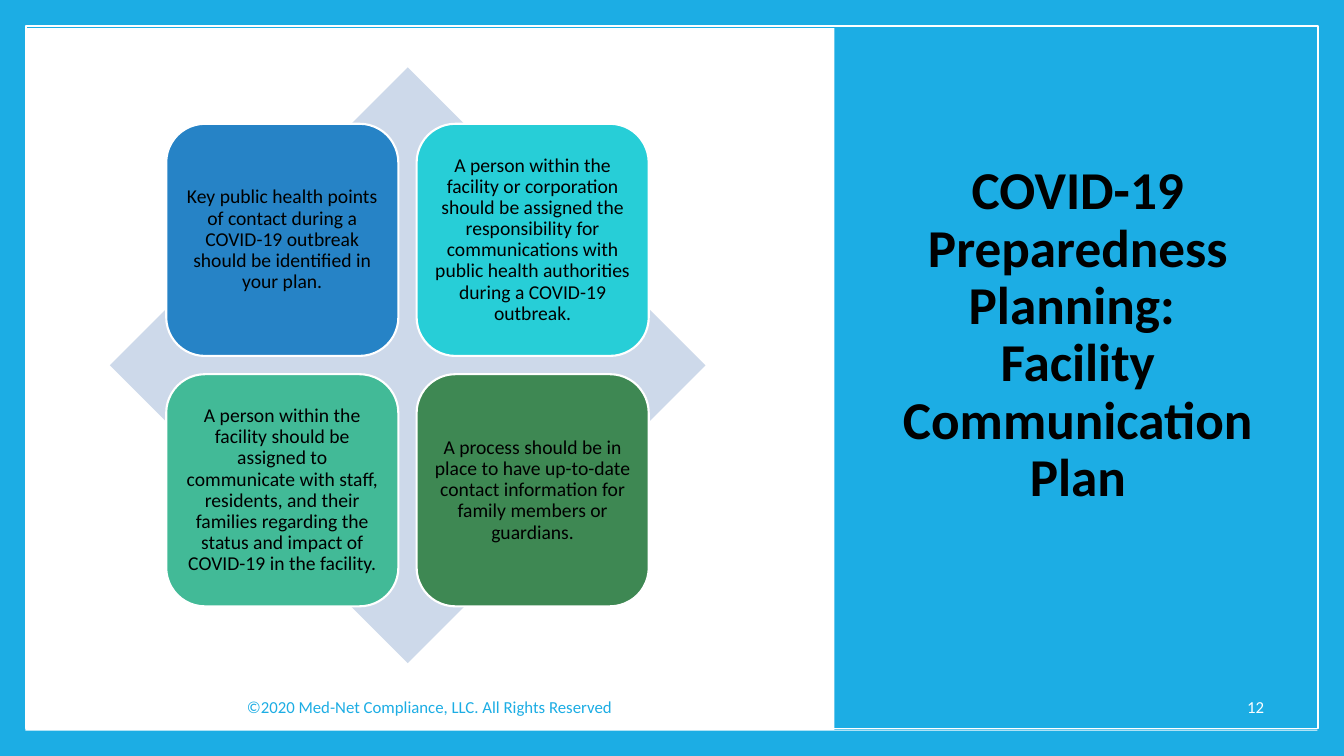
from pptx import Presentation
from pptx import util as u
from pptx.dml.color import RGBColor
from pptx.enum import shapes, text

SHAPE = shapes.MSO_SHAPE
ALIGN = text.PP_ALIGN
BLUE, WHITE, BLACK, PALE = "1CADE4", "FFFFFF", "000000", "CDD9EA"


def color(value):
    return RGBColor.from_string(value)


class SlideBuilder:
    """Holds the text style and the slide being built."""

    font = "Calibri"

    def __init__(self, slide, background):
        self.slide = slide
        slide.background.fill.solid()
        slide.background.fill.fore_color.rgb = color(background)

    def shape(self, kind, left, top, width, height, fill=None, line=None, weight=1):
        box = self.slide.shapes.add_shape(
            kind, u.Cm(left), u.Cm(top), u.Cm(width), u.Cm(height))
        box.shadow.inherit = False
        if fill:
            box.fill.solid()
            box.fill.fore_color.rgb = color(fill)
        else:
            box.fill.background()
        if line:
            box.line.color.rgb = color(line)
            box.line.width = u.Pt(weight)
        else:
            box.line.fill.background()
        return box

    def set_words(self, box, words, size, ink, align, bold=False, spacing=None):
        frame = box.text_frame
        frame.word_wrap = True
        frame.vertical_anchor = text.MSO_ANCHOR.MIDDLE
        para = frame.paragraphs[0]
        para.text = words
        para.alignment = align
        if spacing:
            para.line_spacing = spacing
        for span in para.runs:
            span.font.name = self.font
            span.font.size = u.Pt(size)
            span.font.bold = bold
            span.font.color.rgb = color(ink)
        return frame

    def label(self, left, top, width, height, words, size, ink, align, **style):
        box = self.slide.shapes.add_textbox(
            u.Cm(left), u.Cm(top), u.Cm(width), u.Cm(height))
        return self.set_words(box, words, size, ink, align, **style)

    def card(self, left, top, side, fill, words):
        box = self.shape(SHAPE.ROUNDED_RECTANGLE, left, top, side, side,
                         fill, WHITE, 1.5)
        frame = self.set_words(box, words, 14, BLACK, ALIGN.CENTER, spacing=0.9)
        frame.margin_left = frame.margin_right = u.Cm(0.15)
        frame.margin_top = frame.margin_bottom = u.Cm(0.15)


CARDS = [
    ("2683C6", "Key public health points of contact during a COVID-19 outbreak "
               "should be identified in your plan."),
    ("27CED7", "A person within the facility or corporation should be assigned the "
               "responsibility for communications with public health authorities "
               "during a COVID-19 outbreak."),
    ("42BA97", "A person within the facility should be assigned to communicate with "
               "staff, residents, and their families regarding the status and impact "
               "of COVID-19 in the facility."),
    ("3E8853", "A process should be in place to have up-to-date contact information "
               "for family members or guardians."),
]


def main():
    deck = Presentation()
    deck.slide_width, deck.slide_height = u.Cm(33.87), u.Cm(19.05)
    page = SlideBuilder(deck.slides.add_slide(deck.slide_layouts[6]), BLUE)

    # White page and blue title panel
    page.shape(SHAPE.RECTANGLE, 0.64, 0.71, 32.56, 17.7, WHITE)
    page.shape(SHAPE.RECTANGLE, 21.03, 0.66, 12.19, 17.73, BLUE)

    # Title, raised by a deeper bottom margin
    title = page.label(
        22.2, 1.7, 9.93, 15.01,
        "COVID-19 Preparedness Planning: \vFacility Communication\vPlan",
        38, BLACK, ALIGN.CENTER, bold=True, spacing=0.9)
    title.margin_bottom = u.Cm(1.6)

    # Footer and slide number
    page.label(5.97, 17.3, 17.81, 1.02,
               "©2020 Med-Net Compliance, LLC. All Rights Reserved",
               12, BLUE, ALIGN.LEFT)
    page.label(29.16, 17.3, 2.95, 1.02, "12", 12, WHITE, ALIGN.RIGHT)

    # Thin white frame
    page.shape(SHAPE.RECTANGLE, 0.66, 0.66, 32.56, 17.7, line=WHITE)

    # Diamond with a two-by-two grid of cards
    page.shape(SHAPE.DIAMOND, 2.77, 1.7, 15.01, 15.01, PALE)
    left, top, side, pitch = 4.19, 3.12, 5.85, 6.31
    for index, (fill, words) in enumerate(CARDS):
        row, column = divmod(index, 2)
        page.card(left + column * pitch, top + row * pitch, side, fill, words)

    deck.save("out.pptx")


if __name__ == "__main__":
    main()
